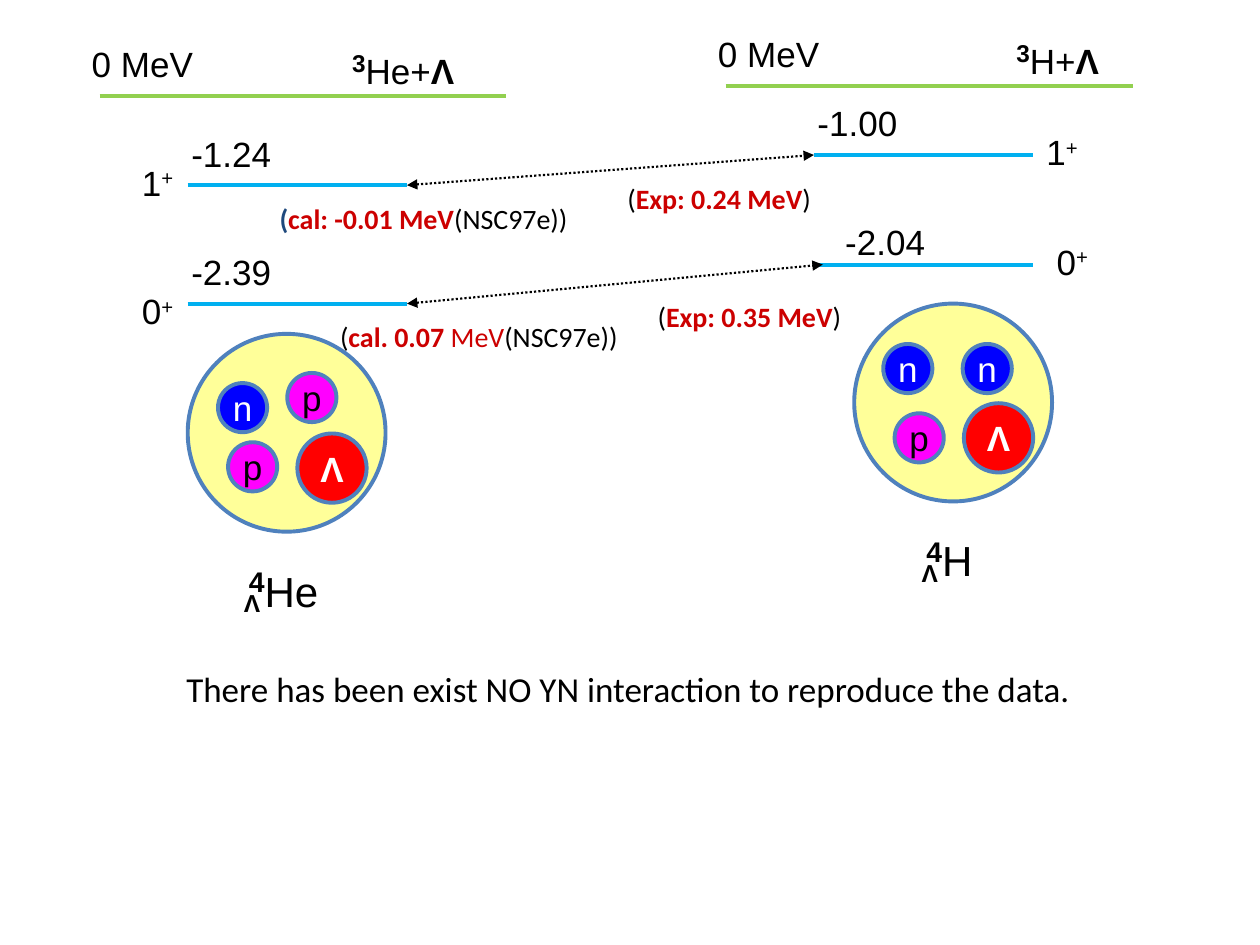
from dataclasses import dataclass

from lxml import etree
from pptx import Presentation
from pptx import util as u
from pptx.dml.color import RGBColor
from pptx.enum import dml, shapes, text
from pptx.oxml import ns


@dataclass(frozen=True)
class Theme:
    ink: str = "000000"
    white: str = "FFFFFF"
    accent: str = "CC0000"
    navy: str = "1F497D"
    threshold: str = "92D050"
    level: str = "00B0F0"
    outline: str = "4F81BD"
    core: str = "FFFF99"
    neutron: str = "0000FF"
    proton: str = "FF00FF"
    hyperon: str = "FF0000"
    diagram_font: str = "Arial"
    note_font: str = "Calibri"
    mass_size: int = 28
    large: int = 24
    body: int = 20
    note: int = 16
    small: int = 14
    rule: float = 2.25
    arrow: float = 1.25


THEME = Theme()
CENTER, LEFT = text.PP_ALIGN.CENTER, text.PP_ALIGN.LEFT
# particle: symbol, diameter, fill, text colour, bold
PARTICLES = {
    "n": ("n", 0.39, THEME.neutron, THEME.white, False),
    "p": ("p", 0.39, THEME.proton, THEME.ink, False),
    "Λ": ("Λ", 0.55, THEME.hyperon, THEME.white, True),
}


def part(words, size=THEME.body, color=THEME.ink, bold=False, raised=False):
    return words, size, color, bold, raised


def write(frame, parts, font, align):
    frame.word_wrap = False
    paragraph = frame.paragraphs[0]
    paragraph.alignment = align
    for words, size, color, bold, raised in parts:
        run = paragraph.add_run()
        run.text = words
        run.font.name, run.font.size, run.font.bold = font, u.Pt(size), bold
        run.font.color.rgb = RGBColor.from_string(color)
        if raised:
            run.font._element.set("baseline", "30000")


def add_label(slide, box, parts, font=THEME.diagram_font, align=CENTER):
    label = slide.shapes.add_textbox(*map(u.Inches, box))
    write(label.text_frame, parts, font, align)
    label.text_frame.auto_size = text.MSO_AUTO_SIZE.SHAPE_TO_FIT_TEXT


def add_line(slide, start, end, color, width):
    line = slide.shapes.add_connector(
        shapes.MSO_CONNECTOR.STRAIGHT, *map(u.Inches, (*start, *end)))
    line.line.color.rgb = RGBColor.from_string(color)
    line.line.width = u.Pt(width)
    etree.SubElement(line._element.spPr, ns.qn("a:effectLst"))
    return line


def add_circle(slide, left, top, diameter, fill):
    circle = slide.shapes.add_shape(
        shapes.MSO_SHAPE.OVAL, *map(u.Inches, (left, top, diameter, diameter)))
    circle.shadow.inherit = False
    circle.fill.solid()
    circle.fill.fore_color.rgb = RGBColor.from_string(fill)
    circle.line.color.rgb = RGBColor.from_string(THEME.outline)
    circle.line.width = u.Pt(THEME.rule)
    return circle


def draw_levels(slide, left, top, channel, channel_x, channel_width, levels):
    """Threshold line and energy levels; offsets run from the threshold's left end."""
    add_line(slide, (left, top), (left + 3.23, top), THEME.threshold, THEME.rule)
    add_label(slide, (left - 0.19, top - 0.47, 1.06, 0.43), [part("0 MeV")])
    add_label(slide, (left + channel_x, top - 0.47, channel_width, 0.43), [
        part("3", THEME.large, bold=True, raised=True),
        part(channel), part("Λ", bold=True)])
    for depth, energy, energy_x, energy_y, spin, spin_x, spin_y in levels:
        y = top + depth
        add_line(slide, (left + 0.7, y), (left + 2.44, y), THEME.level, THEME.rule)
        add_label(slide, (left + energy_x, y + energy_y, 0.89, 0.43), [part(energy)])
        add_label(slide, (left + spin_x, y + spin_y, 0.46, 0.43),
                  [part(spin), part("+", raised=True)])


def draw_nucleus(slide, left, top, element, symbol_x, symbol_width, particles):
    """Nucleus with its particles and symbol; offsets run from its corner."""
    add_circle(slide, left, top, 1.57, THEME.core)
    for kind, x, y in particles:
        symbol, diameter, fill, color, bold = PARTICLES[kind]
        circle = add_circle(slide, left + x, top + y, diameter, fill)
        circle.text_frame.vertical_anchor = text.MSO_ANCHOR.MIDDLE
        write(circle.text_frame, [part(symbol, color=color, bold=bold)],
              THEME.diagram_font, CENTER)
    add_label(slide, (left + symbol_x, top + 1.73, symbol_width, 0.5), [
        part("4", THEME.mass_size, bold=True, raised=True),
        part(element, THEME.large)])
    add_label(slide, (left + symbol_x - 0.06, top + 1.97, 0.4, 0.33),
              [part("Λ", THEME.small, bold=True)])


def draw_splitting(slide, start, end):
    """Dotted double arrow joining matching levels."""
    arrow = add_line(slide, start, end, THEME.ink, THEME.arrow)
    arrow.line.dash_style = dml.MSO_LINE.ROUND_DOT
    for tip in ("a:headEnd", "a:tailEnd"):
        etree.SubElement(arrow.line._ln, ns.qn(tip), type="triangle")


def draw_note(slide, left, top, width, *parts):
    add_label(slide, (left, top, width, 0.37),
              [part(words, THEME.note, color, bold) for words, color, bold in parts],
              THEME.note_font, LEFT)


def main():
    deck = Presentation()
    deck.slide_width, deck.slide_height = u.Inches(10), u.Inches(7.5)
    slide = deck.slides.add_slide(deck.slide_layouts[6])

    # Helium side
    draw_levels(slide, 0.79, 0.76, "He+", 1.85, 1.12, [
        (0.71, "-1.24", 0.6, -0.47, "1", 0.23, -0.24),
        (1.65, "-2.39", 0.6, -0.47, "0", 0.23, -0.16)])
    draw_nucleus(slide, 1.49, 2.65, "He", 0.37, 0.78, [
        ("n", 0.24, 0.39), ("p", 0.32, 0.86), ("Λ", 0.87, 0.79), ("p", 0.79, 0.31)])

    # Hydrogen side
    draw_levels(slide, 5.76, 0.68, "H+", 2.15, 0.97, [
        (0.55, "-1.00", 0.6, -0.47, "1", 2.44, -0.24),
        (1.42, "-2.04", 0.82, -0.4, "0", 2.52, -0.24)])
    draw_nucleus(slide, 6.78, 2.41, "H", 0.46, 0.59, [
        ("n", 0.23, 0.32), ("n", 0.86, 0.32), ("p", 0.32, 0.87), ("Λ", 0.87, 0.79)])

    # Splittings between the two sides
    draw_splitting(slide, (3.23, 1.47), (6.46, 1.23))
    draw_splitting(slide, (3.23, 2.41), (6.53, 2.1))

    # Measured and calculated values
    ink, accent = THEME.ink, THEME.accent
    for left, top, value in ((4.88, 1.39, "0.24"), (5.12, 2.33, "0.35")):
        draw_note(slide, left, top, 1.85, ("(", ink, False),
                  (f"Exp: {value} MeV", accent, True), (")", ink, False))
    model = ("(NSC97e))", ink, False)
    draw_note(slide, 2.6, 2.49, 2.72, ("(", ink, False),
              ("cal. 0.07 ", accent, True), ("MeV", accent, False), model)
    draw_note(slide, 2.12, 1.55, 2.81, ("(", THEME.navy, True),
              ("cal: -0.01 MeV", accent, True), model)

    # Conclusion
    add_label(slide, (1.38, 5.25, 7.22, 0.44),
              [part("There has been exist NO YN interaction to reproduce the data.")],
              THEME.note_font, LEFT)
    deck.save("out.pptx")


if __name__ == "__main__":
    main()
